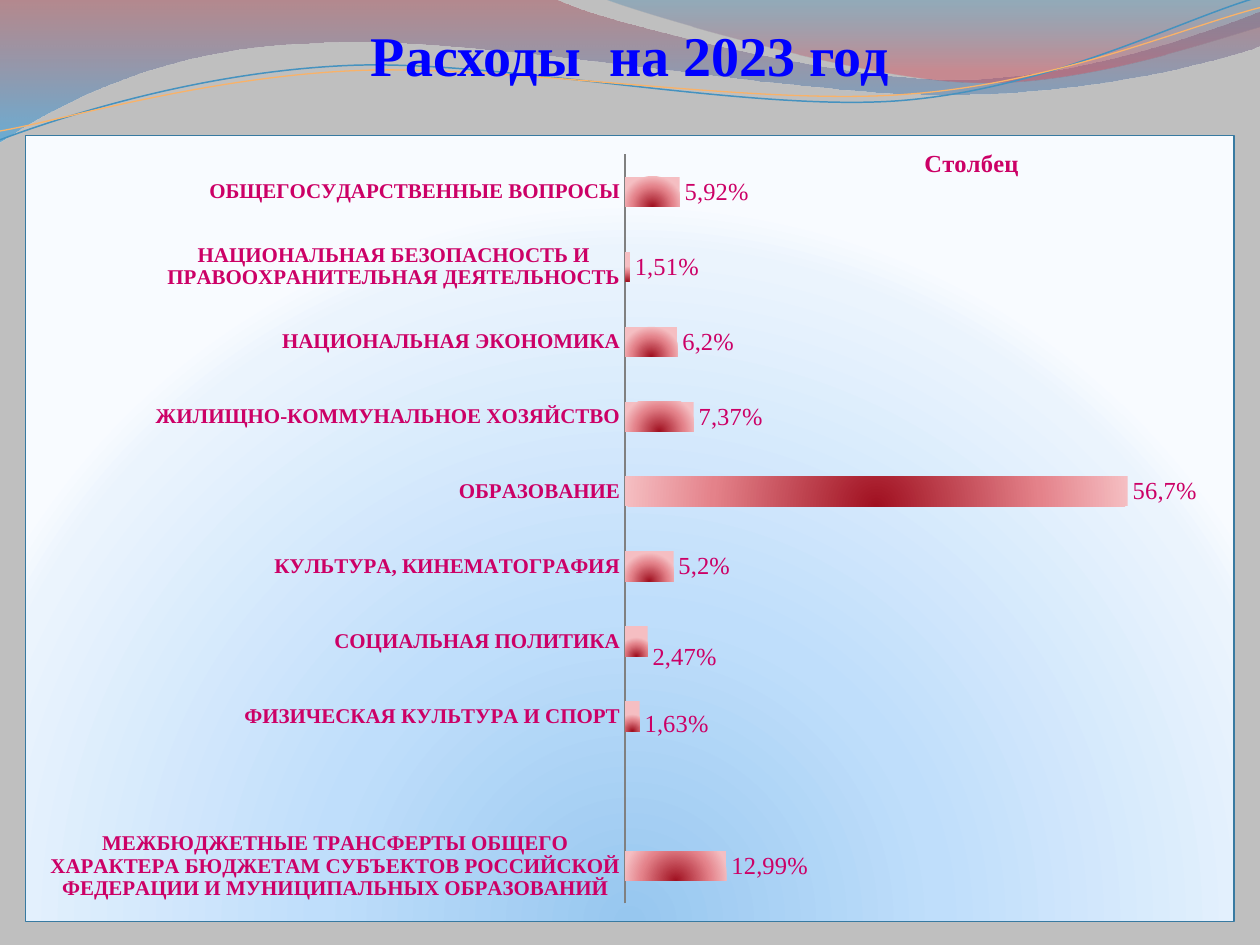
import math

import pptx
import pptx.chart.data
import pptx.dml.color
import pptx.enum.chart
import pptx.enum.text
import pptx.oxml
import pptx.oxml.ns
import pptx.util
from lxml import etree

Inches, Pt = pptx.util.Inches, pptx.util.Pt
RGB = pptx.dml.color.RGBColor
qn = pptx.oxml.ns.qn

FONT = "Times New Roman"
BACKGROUND = RGB(0xBF, 0xBF, 0xBF)
TITLE_BLUE = RGB(0x00, 0x00, 0xFF)
MAGENTA = RGB(0xCC, 0x00, 0x66)
AXIS_GRAY = RGB(0x80, 0x80, 0x80)
BORDER_BLUE = RGB(0x38, 0x7A, 0xA1)
WAVE_BLUE = RGB(0x45, 0x92, 0xBF)
WAVE_ORANGE = RGB(0xF9, 0xB2, 0x68)

# Content
TITLE = "Расходы  на 2023 год"
SERIES = "Столбец"
EXPENSES = [  # category, bar value, label; listed from bottom to top
    ("МЕЖБЮДЖЕТНЫЕ ТРАНСФЕРТЫ ОБЩЕГО ХАРАКТЕРА БЮДЖЕТАМ СУБЪЕКТОВ "
     "РОССИЙСКОЙ ФЕДЕРАЦИИ И МУНИЦИПАЛЬНЫХ ОБРАЗОВАНИЙ", 11.66, "12,99%"),
    ("", None, ""),
    ("ФИЗИЧЕСКАЯ КУЛЬТУРА И СПОРТ", 1.67, "1,63%"),
    ("СОЦИАЛЬНАЯ ПОЛИТИКА", 2.59, "2,47%"),
    ("КУЛЬТУРА, КИНЕМАТОГРАФИЯ", 5.57, "5,2%"),
    ("ОБРАЗОВАНИЕ", 57.78, "56,7%"),
    ("ЖИЛИЩНО-КОММУНАЛЬНОЕ ХОЗЯЙСТВО", 7.88, "7,37%"),
    ("НАЦИОНАЛЬНАЯ ЭКОНОМИКА", 6.01, "6,2%"),
    ("НАЦИОНАЛЬНАЯ БЕЗОПАСНОСТЬ И ПРАВООХРАНИТЕЛЬНАЯ ДЕЯТЕЛЬНОСТЬ", 0.55, "1,51%"),
    ("ОБЩЕГОСУДАРСТВЕННЫЕ ВОПРОСЫ", 6.28, "5,92%"),
]
LABEL_DROP = {2: 0.01, 3: 0.02}  # labels set lower, as a share of chart height

# Gradient stops: position %, colour, opacity %
LEFT_STOPS = [(0, "A84752", 45), (100, "249FE6", 55)]
RIGHT_STOPS = [(0, "2A7EAF", 30), (80, "D24B5A", 45)]
PANEL_STOPS = [(0, "97C7EF", 100), (43, "BFDEFB", 100), (93, "EBF4FD", 100), (100, "F8FBFF", 100)]
BAR_STOPS = [(0, "A01020", 100), (65, "E4828A", 100), (100, "F5BEC2", 100)]

# Header outlines: box, then start and 1-point lines or 3-point Bezier curves
LEFT_SWOOSH = ((-0.01, -0.01, 10.02, 1.14), [
    [(0, 0)], [(4.4, -0.01)],
    [(4.76, 0.17), (6.64, 0.63), (7.58, 0.63)],
    [(8.53, 0.63), (9.58, 0.26), (10, 0.09)], [(10.01, 0.36)],
    [(9.83, 0.44), (8.7, 0.76), (7.46, 0.75)],
    [(6.22, 0.75), (3.82, 0.28), (2.57, 0.34)],
    [(1.29, 0.36), (0.46, 0.83), (-0.01, 1.13)]])
RIGHT_SWOOSH = ((4.79, -0.01, 5.21, 0.7), [
    [(4.79, -0.01)], [(5.09, 0.11), (6.82, 0.62), (7.69, 0.65)],
    [(8.56, 0.69), (9.61, 0.32), (10, 0.21)], [(10, 0)]])
BLUE_WAVE = ((-0.02, 0.22, 10.02, 0.71), [
    [(0, 1.11)], [(0.48, 0.93), (1.58, 0.57), (2.77, 0.52)],
    [(3.95, 0.47), (5.93, 0.89), (7.13, 0.8)],
    [(8.33, 0.71), (9.38, 0.15), (9.98, -0.02)]])
ORANGE_WAVE = ((-0.02, 0.3, 10.03, 0.58), [
    [(0, 1.04)], [(0.47, 0.96), (1.64, 0.61), (2.83, 0.56)],
    [(4.03, 0.51), (5.97, 0.84), (7.17, 0.75)],
    [(8.36, 0.67), (9.41, 0.21), (10, 0.06)]])
WAVE_TILT = -2.7


def set_gradient(properties, stops, direction):
    """Replace the solid fill of a shape-properties element by a gradient."""
    gradient = etree.Element(qn("a:gradFill"), rotWithShape="1")
    stop_list = etree.SubElement(gradient, qn("a:gsLst"))
    for position, colour, opacity in stops:
        stop = etree.SubElement(stop_list, qn("a:gs"), pos=str(position * 1000))
        rgb = etree.SubElement(stop, qn("a:srgbClr"), val=colour)
        if opacity < 100:
            etree.SubElement(rgb, qn("a:alpha"), val=str(opacity * 1000))
    if direction == "down":
        etree.SubElement(gradient, qn("a:lin"), ang="5400000", scaled="0")
    else:
        glow = etree.SubElement(gradient, qn("a:path"), path="circle")
        etree.SubElement(glow, qn("a:fillToRect"), l="50000", t="130000", r="50000", b="-30000")
    properties.replace(properties.find(qn("a:solidFill")), gradient)


def manual_layout(**settings):
    layout = etree.Element(qn("c:layout"))
    manual = etree.SubElement(layout, qn("c:manualLayout"))
    for tag, value in settings.items():
        etree.SubElement(manual, qn("c:" + tag), val=str(value))
    return layout


def add_outline(shapes, box, segments, closed, tilt=0):
    """Add a freeform in its box and turn its 3-point segments into curves."""
    left, top, width, height = box
    turn = math.radians(-tilt)

    def local(point):
        dx, dy = point[0] - left - width / 2, point[1] - top - height / 2
        return (Inches(width / 2 + dx * math.cos(turn) - dy * math.sin(turn)),
                Inches(height / 2 + dx * math.sin(turn) + dy * math.cos(turn)))

    builder = shapes.build_freeform(*local(segments[0][0]))
    builder.add_line_segments([local(segment[-1]) for segment in segments[1:]], close=closed)
    shape = builder.convert_to_shape()
    shape.left, shape.top, shape.width, shape.height = map(Inches, box)
    shape.rotation = tilt
    shape.shadow.inherit = False
    outline = next(shape._element.iter(qn("a:path")))
    outline.set("w", str(Inches(width)))
    outline.set("h", str(Inches(height)))
    for step, segment in zip(list(outline), segments):
        tag = qn("a:cubicBezTo") if len(segment) == 3 else step.tag
        piece = etree.Element(tag)
        for x, y in map(local, segment):
            etree.SubElement(piece, qn("a:pt"), x=str(int(x)), y=str(int(y)))
        outline.replace(step, piece)
    return shape


def style(font, size, colour, bold):
    font.name, font.size, font.bold = FONT, Pt(size), bold
    font.color.rgb = colour


def add_header(slide):
    for outline, stops in ((LEFT_SWOOSH, LEFT_STOPS), (RIGHT_SWOOSH, RIGHT_STOPS)):
        swoosh = add_outline(slide.shapes, *outline, True)
        swoosh.fill.solid()
        swoosh.fill.fore_color.rgb = BACKGROUND
        set_gradient(swoosh._element.spPr, stops, "down")
        swoosh.line.fill.background()
    waves = slide.shapes.add_group_shape()
    for outline, colour, width in ((BLUE_WAVE, WAVE_BLUE, 0.85), (ORANGE_WAVE, WAVE_ORANGE, 0.75)):
        wave = add_outline(waves.shapes, *outline, False, WAVE_TILT)
        wave.fill.background()
        wave.line.color.rgb = colour
        wave.line.width = Pt(width)


def add_title(slide):
    title = slide.shapes.title
    title.left, title.top, title.width, title.height = map(Inches, (0, 0.23, 10, 0.47))
    frame = title.text_frame
    frame.vertical_anchor = pptx.enum.text.MSO_ANCHOR.BOTTOM
    frame.margin_left = frame.margin_right = frame.margin_bottom = 0
    frame.margin_top = Inches(0.05)
    frame.paragraphs[0].alignment = pptx.enum.text.PP_ALIGN.CENTER
    run = frame.paragraphs[0].add_run()
    run.text = TITLE
    style(run.font, 32, TITLE_BLUE, True)
    slide.shapes._spTree.append(title._element)  # in front of the waves


def add_expense_chart(slide):
    data = pptx.chart.data.CategoryChartData()
    data.categories = [name for name, _, _ in EXPENSES]
    data.add_series(SERIES, [value for _, value, _ in EXPENSES])
    chart = slide.shapes.add_chart(
        pptx.enum.chart.XL_CHART_TYPE.BAR_CLUSTERED,
        *map(Inches, (0.2, 1.07, 9.6, 6.25)), data).chart
    style(chart.font, 12, MAGENTA, True)
    chart.has_legend = False

    # Chart title
    chart.has_title = True
    heading = chart.chart_title.text_frame.paragraphs[0].add_run()
    heading.text = SERIES
    style(heading.font, 14, MAGENTA, True)
    title_xml = chart.chart_title._element
    for old in title_xml.findall(qn("c:layout")):
        title_xml.remove(old)
    title_xml.find(qn("c:tx")).addnext(
        manual_layout(xMode="edge", yMode="edge", x=0.74, y=0.01))

    # Axes and plot area
    chart.value_axis.visible = False
    chart.value_axis.has_major_gridlines = False
    chart.value_axis.minimum_scale, chart.value_axis.maximum_scale = 0, 70
    chart.category_axis.major_tick_mark = pptx.enum.chart.XL_TICK_MARK.NONE
    chart.category_axis.format.line.color.rgb = AXIS_GRAY
    style(chart.category_axis.tick_labels.font, 12, MAGENTA, True)
    plot_area = chart._chartSpace.chart.plotArea
    for old in plot_area.findall(qn("c:layout")):
        plot_area.remove(old)
    plot_area.insert(0, manual_layout(layoutTarget="inner", xMode="edge", yMode="edge",
                                      x=0.496, y=0.024, w=0.504, h=0.953))

    # Bars and labels
    plot = chart.plots[0]
    plot.gap_width, plot.overlap, plot.vary_by_categories = 150, -25, False
    bars = plot.series[0]
    bars.format.fill.solid()
    bars.format.fill.fore_color.rgb = WAVE_ORANGE
    set_gradient(bars._element.spPr, BAR_STOPS, "glow")
    bars.data_labels.show_value = True
    style(bars.data_labels.font, 14, MAGENTA, False)
    for index, (_, value, text) in enumerate(EXPENSES):
        if value is None:
            continue
        label = bars.points[index].data_label
        run = label.text_frame.paragraphs[0].add_run()
        run.text = text
        style(run.font, 14, MAGENTA, False)
        label.position = pptx.enum.chart.XL_LABEL_POSITION.OUTSIDE_END
        if index in LABEL_DROP:
            label_xml = bars._element.findall(f".//{qn('c:dLbl')}")[-1]
            label_xml.find(qn("c:idx")).addnext(manual_layout(x=0, y=LABEL_DROP[index]))

    # Panel behind the chart
    panel = pptx.oxml.parse_xml(
        f'<c:spPr {pptx.oxml.ns.nsdecls("c", "a")}><a:solidFill/><a:ln w="{Pt(0.75)}">'
        f'<a:solidFill><a:srgbClr val="{BORDER_BLUE}"/></a:solidFill></a:ln></c:spPr>')
    set_gradient(panel, PANEL_STOPS, "glow")
    chart._chartSpace.chart.addnext(panel)


def main():
    deck = pptx.Presentation()
    deck.slide_width, deck.slide_height = Inches(10), Inches(7.5)
    slide = deck.slides.add_slide(deck.slide_layouts[5])
    slide.background.fill.solid()
    slide.background.fill.fore_color.rgb = BACKGROUND
    add_header(slide)
    add_title(slide)
    add_expense_chart(slide)
    deck.save("out.pptx")


if __name__ == "__main__":
    main()
